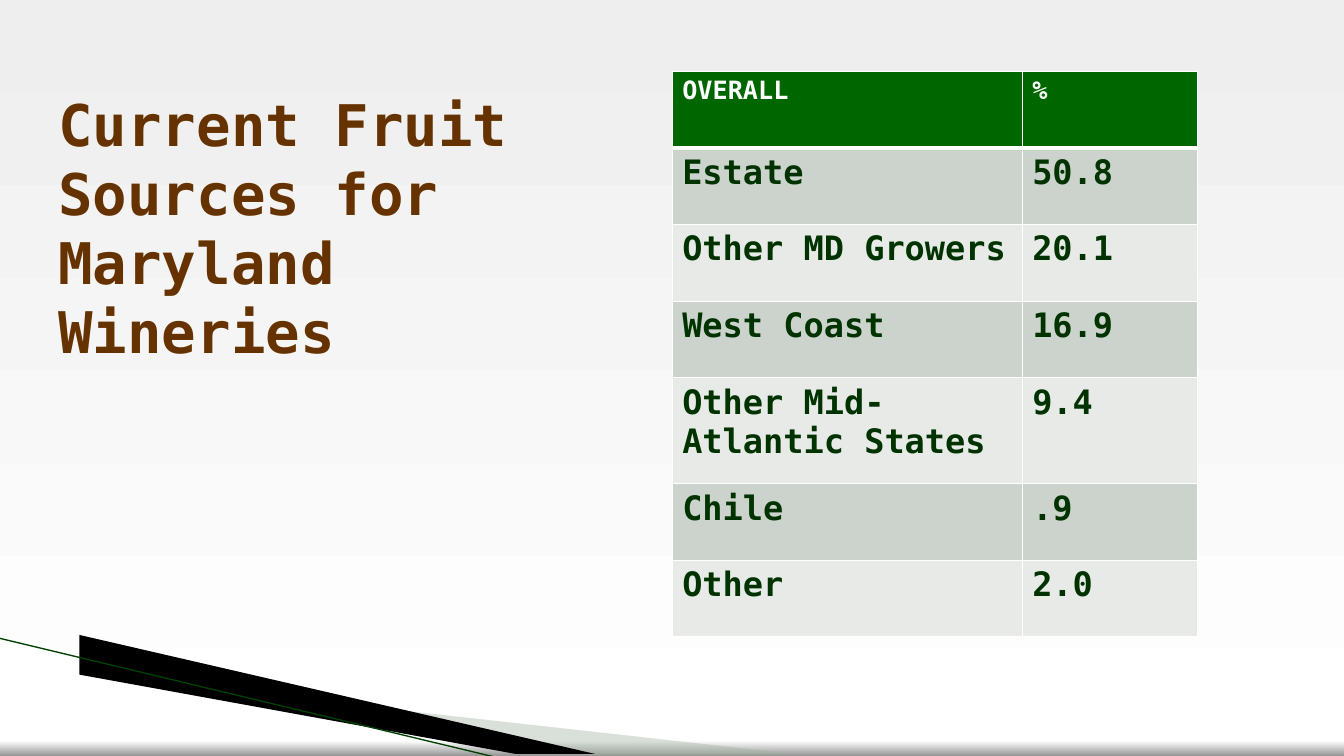
from copy import deepcopy
from dataclasses import dataclass

from lxml.etree import SubElement
from pptx import Presentation
from pptx.dml.color import RGBColor
from pptx.enum.shapes import MSO_CONNECTOR
from pptx.enum.text import MSO_ANCHOR
from pptx.oxml.ns import qn
from pptx.util import Cm, Pt

FONT = "DejaVu Sans Mono"
HEADER_FILL = "006600"
BAND_FILLS = ("CCD3CC", "E7EAE7")


@dataclass
class Wedge:
    points: list[tuple[float, float]]
    color: str
    alpha: int = 100


@dataclass
class Source:
    name: str
    share: str
    height: float = 1.93


WEDGES = [
    Wedge([(1.85, 16.53), (20.14, 19.08), (15.44, 19.08), (1.85, 16.51)], "A0B2A0", 40),
    Wedge([(1.8, 16.48), (15.47, 19.08), (12.6, 19.1), (1.83, 16.51)], "000000"),
]
SOURCES = [
    Source("OVERALL", "%"),
    Source("Estate", "50.8"),
    Source("Other MD Growers", "20.1"),
    Source("West Coast", "16.9"),
    Source("Other Mid-Atlantic States", "9.4", 2.67),
    Source("Chile", ".9"),
    Source("Other", "2.0"),
]


def rgb(color: str) -> RGBColor:
    return RGBColor.from_string(color)


def set_font(p, size: float, color: str) -> None:
    font = p.font
    font.name, font.size, font.bold = FONT, Pt(size), True
    font.color.rgb = rgb(color)


def set_background(s) -> None:
    fill = s.background.fill
    fill.gradient()
    fill.gradient_angle = 270
    last = s.element.find(".//" + qn("a:gsLst"))[-1]
    last.addnext(deepcopy(last))
    stops = [(0, "EEEEEE"), (0.98, "FFFFFF"), (1, "959595")]
    for stop, (position, color) in zip(fill.gradient_stops, stops):
        stop.position = position
        stop.color.rgb = rgb(color)


def add_wedge(s, wedge: Wedge) -> None:
    builder = s.shapes.build_freeform(*wedge.points[0], scale=Cm(1))
    builder.add_line_segments(wedge.points[1:], close=True)
    sp = builder.convert_to_shape()
    sp.shadow.inherit = False
    sp.line.fill.background()
    sp.fill.solid()
    sp.fill.fore_color.rgb = rgb(wedge.color)
    if wedge.alpha < 100:
        color = sp.element.spPr.find(".//" + qn("a:srgbClr"))
        SubElement(color, qn("a:alpha"), val=str(wedge.alpha * 1000))


def fill_cell(cell, text: str, row: int) -> None:
    header = row == 0
    cell.text = text
    set_font(cell.text_frame.paragraphs[0], 18 if header else 24,
             "FFFFFF" if header else "003300")
    # Borders come before the fill in the cell properties
    tc_pr = cell._tc.get_or_add_tcPr()
    for side in "LRTB":
        heavy = (header and side == "B") or (row == 1 and side == "T")
        ln = SubElement(tc_pr, qn(f"a:ln{side}"), w=str(Pt(3 if heavy else 1)))
        solid = SubElement(ln, qn("a:solidFill"))
        SubElement(solid, qn("a:srgbClr"), val="FFFFFF")
    cell.fill.solid()
    cell.fill.fore_color.rgb = rgb(HEADER_FILL if header else BAND_FILLS[(row - 1) % 2])


def add_source_table(s) -> None:
    height = sum(source.height for source in SOURCES)
    table = s.shapes.add_table(len(SOURCES), 2, Cm(16.94), Cm(1.8),
                               Cm(13.23), Cm(height)).table
    for column, width in zip(table.columns, (8.82, 4.41)):
        column.width = Cm(width)
    for row, source in enumerate(SOURCES):
        table.rows[row].height = Cm(source.height)
        for col, text in enumerate((source.name, source.share)):
            fill_cell(table.cell(row, col), text, row)


def main() -> None:
    prs = Presentation()
    prs.slide_width, prs.slide_height = Cm(33.87), Cm(19.05)
    s = prs.slides.add_slide(prs.slide_layouts[6])

    # Background and corner decoration
    set_background(s)
    for wedge in WEDGES:
        add_wedge(s, wedge)
    edge = s.shapes.add_connector(MSO_CONNECTOR.STRAIGHT, Cm(-0.03), Cm(16.08),
                                  Cm(12.57), Cm(19.1))
    edge.line.color.rgb = rgb("004000")
    edge.line.width = Pt(0.95)
    SubElement(edge.element.spPr, qn("a:effectLst"))

    # Title
    tf = s.shapes.add_textbox(Cm(1.22), Cm(0.99), Cm(14.27), Cm(9.47)).text_frame
    tf.word_wrap = True
    tf.vertical_anchor = MSO_ANCHOR.MIDDLE
    p = tf.paragraphs[0]
    p.text = "Current Fruit Sources for Maryland Wineries"
    set_font(p, 41, "663300")

    # Fruit sources
    add_source_table(s)
    prs.save("out.pptx")


if __name__ == "__main__":
    main()
